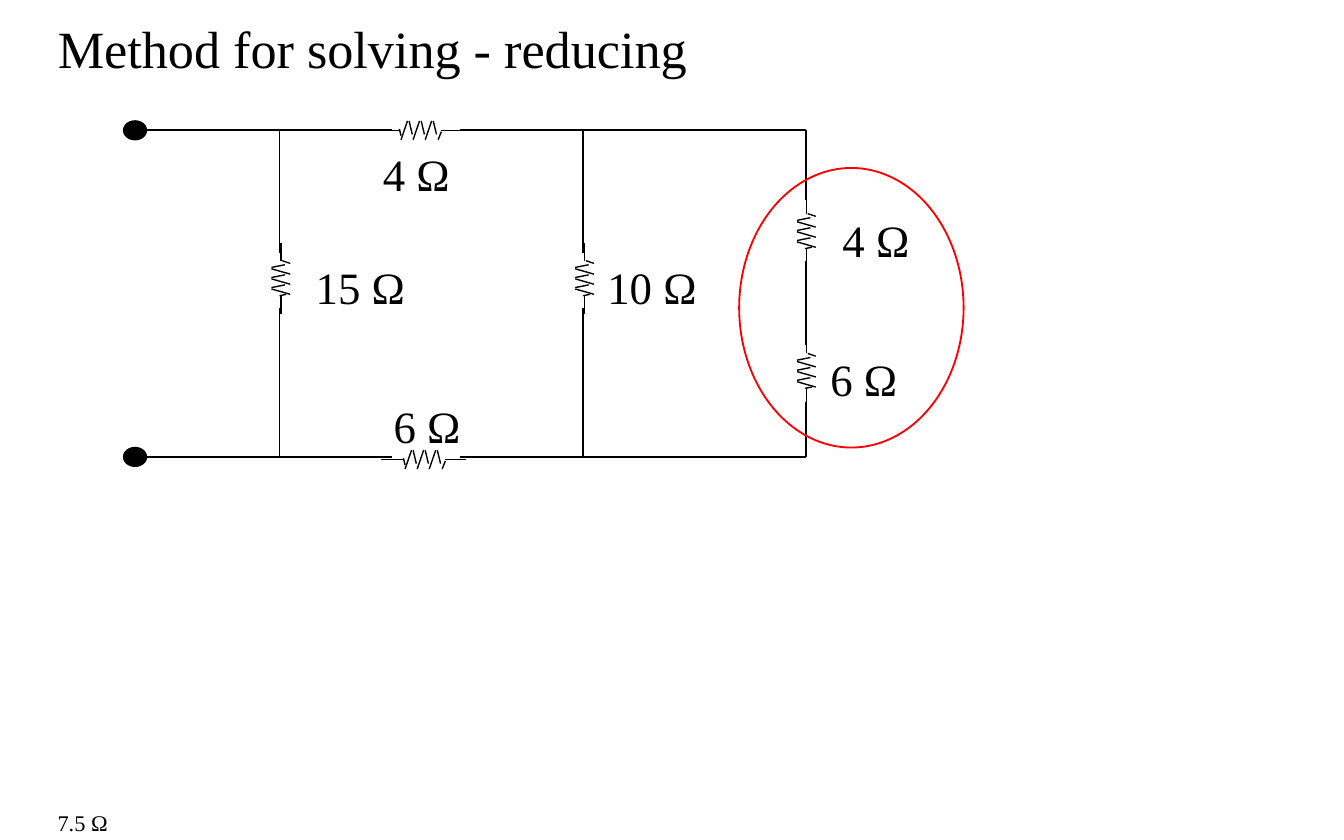
"""Build the slide on reducing a resistor ladder network."""
import dataclasses
import typing

import pptx
import pptx.dml.color
import pptx.enum.shapes
import pptx.enum.text
import pptx.oxml
import pptx.oxml.ns
import pptx.util

Inches = pptx.util.Inches
Point = typing.Tuple[float, float]

COLORS = {"ink": "000000", "highlight": "FF0000"}
FONT = "Times New Roman"
TOP_RAIL, BOTTOM_RAIL = 0.97, 3.4
TERMINAL_X, LEFT_BRANCH, MIDDLE_BRANCH, RIGHT_BRANCH = 1, 2.08, 4.34, 6
HORIZONTAL_SCALE = 1.2
ZIGZAG_PITCH = 0.075


@dataclasses.dataclass
class Resistor:
    x: float
    y: float
    horizontal: bool = False


@dataclasses.dataclass
class Wire:
    start: Point
    end: Point


@dataclasses.dataclass
class Label:
    text: str
    left: float
    top: float
    width: float = 0.71
    height: float = 0.5
    size: float = 24


@dataclasses.dataclass
class Ellipse:
    left: float
    top: float
    width: float
    height: float
    color: str
    filled: bool


RESISTORS = [
    Resistor(2.09, 1.81),
    Resistor(3.44, 0.97, True),
    Resistor(3.47, 3.42, True),
    Resistor(4.35, 1.81),
    Resistor(RIGHT_BRANCH, 1.46),
    Resistor(RIGHT_BRANCH, 2.5),
]

WIRES = [
    Wire((start, rail), (end, rail))
    for start, end in ((TERMINAL_X, 2.92), (3.42, RIGHT_BRANCH))
    for rail in (TOP_RAIL, BOTTOM_RAIL)
] + [
    Wire((branch, start), (branch, end))
    for branch, start, end in (
        (LEFT_BRANCH, TOP_RAIL, 1.88),
        (LEFT_BRANCH, 2.29, BOTTOM_RAIL),
        (MIDDLE_BRANCH, TOP_RAIL, 1.88),
        (MIDDLE_BRANCH, 2.29, BOTTOM_RAIL),
        (RIGHT_BRANCH, TOP_RAIL, 1.49),
        (RIGHT_BRANCH, 1.94, 2.57),
        (RIGHT_BRANCH, 2.99, BOTTOM_RAIL),
    )
]

LABELS = [
    Label("7.5 Ω", 0.33, 5.97, 0.58, 0.3, 12),
    Label("15 Ω", 2.25, 1.88, 0.88),
    Label("4 Ω", 6.17, 1.53),
    Label("6 Ω", 6.08, 2.57),
    Label("10 Ω", 4.42, 1.88, 0.88),
    Label("4 Ω", 2.75, 1.04),
    Label("6 Ω", 2.83, 2.92),
]

TERMINALS = [
    Ellipse(0.92, rail - 0.07, 0.17, 0.14, "ink", True)
    for rail in (TOP_RAIL, BOTTOM_RAIL)
]
REDUCED_PAIR = Ellipse(5.5, 1.25, 1.67, 2.08, "highlight", False)


def rgb(name: str) -> pptx.dml.color.RGBColor:
    """Return the named colour."""
    return pptx.dml.color.RGBColor.from_string(COLORS[name])


def format_text(shape, text: str, size: float, wrap: bool) -> None:
    """Write one left-aligned paragraph into a shape."""
    frame = shape.text_frame
    frame.text = text
    frame_format = {
        "word_wrap": wrap,
        "auto_size": pptx.enum.text.MSO_AUTO_SIZE.SHAPE_TO_FIT_TEXT,
        "vertical_anchor": pptx.enum.text.MSO_ANCHOR.TOP,
    }
    for name, value in frame_format.items():
        setattr(frame, name, value)
    paragraph = frame.paragraphs[0]
    paragraph.alignment = pptx.enum.text.PP_ALIGN.LEFT
    font = paragraph.runs[0].font
    for name, value in {"name": FONT, "size": pptx.util.Pt(size)}.items():
        setattr(font, name, value)
    font.color.rgb = rgb("ink")


def draw_title(slide, text: str) -> None:
    """Place and fill the title placeholder."""
    title = slide.shapes.title
    position = {"left": 0.33, "top": 0.07, "width": 9.33, "height": 0.57}
    for name, value in position.items():
        setattr(title, name, Inches(value))
    format_text(title, text, 28, True)


def draw_label(slide, label: Label) -> None:
    """Draw one unwrapped text label."""
    shape = slide.shapes.add_textbox(
        Inches(label.left), Inches(label.top), Inches(label.width), Inches(label.height)
    )
    format_text(shape, label.text, label.size, False)


def draw_line(shapes, wire: Wire, width: float) -> None:
    """Draw one straight line without a shadow."""
    connector = shapes.add_connector(
        pptx.enum.shapes.MSO_CONNECTOR.STRAIGHT,
        *(Inches(value) for value in wire.start + wire.end),
    )
    connector.line.color.rgb = rgb("ink")
    connector.line.width = pptx.util.Pt(width)
    properties = connector._element.spPr
    properties.append(pptx.oxml.parse_xml(
        "<a:effectLst %s/>" % pptx.oxml.ns.nsdecls("a")
    ))


def resistor_strokes() -> typing.List[Wire]:
    """Return the strokes as (along, across) distances from the first lead."""
    strokes = []
    for index in range(3):
        shift = index * ZIGZAG_PITCH
        strokes.append(Wire((0.16 + shift, 0.03), (0.18 + shift, -0.07)))
        strokes.append(Wire((0.19 + shift, -0.07), (0.23 + shift, 0.07)))
    strokes += [
        Wire((0.38, 0.04), (0.39, -0.01)),
        Wire((0.13, 0.01), (0.15, 0.07)),
        Wire((0.39, 0), (0.53, 0)),
        Wire((0, 0), (0.13, 0)),
    ]
    return strokes


def draw_resistor(slide, resistor: Resistor) -> None:
    """Draw a grouped resistor running down, or leftwards if horizontal."""

    def place(point: Point) -> Point:
        along, across = point
        if resistor.horizontal:
            return resistor.x - HORIZONTAL_SCALE * along, resistor.y + across
        return resistor.x + across, resistor.y + along

    group = slide.shapes.add_group_shape()
    for stroke in resistor_strokes():
        draw_line(group.shapes, Wire(place(stroke.start), place(stroke.end)), 0.75)


def draw_ellipse(slide, ellipse: Ellipse) -> None:
    """Draw a solid terminal or an outlined highlight."""
    shape = slide.shapes.add_shape(
        pptx.enum.shapes.MSO_SHAPE.OVAL,
        Inches(ellipse.left), Inches(ellipse.top),
        Inches(ellipse.width), Inches(ellipse.height),
    )
    shape.shadow.inherit = False
    if ellipse.filled:
        shape.fill.solid()
        shape.fill.fore_color.rgb = rgb(ellipse.color)
    else:
        shape.fill.background()
    shape.line.color.rgb = rgb(ellipse.color)
    shape.line.width = pptx.util.Pt(0.75 if ellipse.filled else 1)


def main() -> None:
    """Assemble and save the presentation."""
    presentation = pptx.Presentation()
    presentation.slide_width, presentation.slide_height = Inches(10), Inches(6.25)
    slide = presentation.slides.add_slide(presentation.slide_layouts[5])
    draw_title(slide, "Method for solving - reducing")
    for terminal in TERMINALS:
        draw_ellipse(slide, terminal)
    for resistor in RESISTORS:
        draw_resistor(slide, resistor)
    for wire in WIRES:
        draw_line(slide.shapes, wire, 1)
    for label in LABELS:
        draw_label(slide, label)
    draw_ellipse(slide, REDUCED_PAIR)
    presentation.save("out.pptx")


if __name__ == "__main__":
    main()
